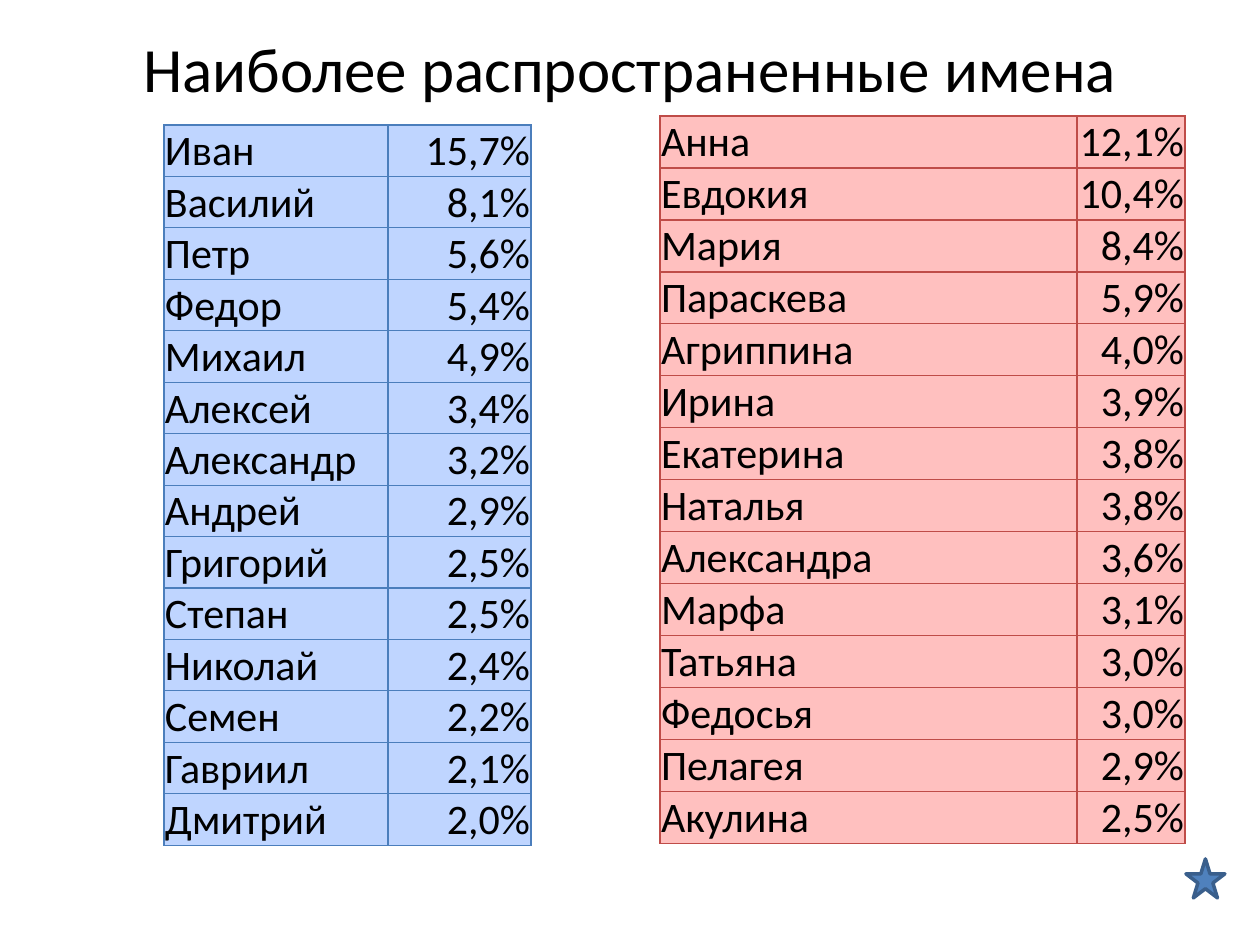
from lxml import etree
from pptx import Presentation
from pptx.dml.color import RGBColor
from pptx.enum.shapes import MSO_SHAPE
from pptx.enum.text import MSO_ANCHOR, PP_ALIGN
from pptx.oxml.ns import qn
from pptx.util import Pt

PX = 914400 / 126
FONT = "Calibri"
LEFT, CENTER, RIGHT = PP_ALIGN.LEFT, PP_ALIGN.CENTER, PP_ALIGN.RIGHT
MIDDLE, BOTTOM = MSO_ANCHOR.MIDDLE, MSO_ANCHOR.BOTTOM
STAR = MSO_SHAPE.STAR_5_POINT

MALE_NAMES = [
    ("Иван", "15,7%"), ("Василий", "8,1%"), ("Петр", "5,6%"),
    ("Федор", "5,4%"), ("Михаил", "4,9%"), ("Алексей", "3,4%"),
    ("Александр", "3,2%"), ("Андрей", "2,9%"), ("Григорий", "2,5%"),
    ("Степан", "2,5%"), ("Николай", "2,4%"), ("Семен", "2,2%"),
    ("Гавриил", "2,1%"), ("Дмитрий", "2,0%"),
]
FEMALE_NAMES = [
    ("Анна", "12,1%"), ("Евдокия", "10,4%"), ("Мария", "8,4%"),
    ("Параскева", "5,9%"), ("Агриппина", "4,0%"), ("Ирина", "3,9%"),
    ("Екатерина", "3,8%"), ("Наталья", "3,8%"), ("Александра", "3,6%"),
    ("Марфа", "3,1%"), ("Татьяна", "3,0%"), ("Федосья", "3,0%"),
    ("Пелагея", "2,9%"), ("Акулина", "2,5%"),
]


def px(n):
    return round(n * PX)


def rgb(color):
    return RGBColor.from_string(color)


def write(tf, text, size, align):
    p = tf.paragraphs[0]
    p.text = text
    p.alignment = align
    p.font.name = FONT
    p.font.size = Pt(size)
    p.font.color.rgb = rgb("000000")


def set_margins(target, side, bottom):
    target.margin_left = target.margin_right = target.margin_top = px(side)
    target.margin_bottom = px(bottom)


def add_title(slide, text, x, y, w, h):
    tf = slide.shapes.add_textbox(px(x), px(y), px(w), px(h)).text_frame
    tf.word_wrap = True
    tf.vertical_anchor = MIDDLE
    set_margins(tf, 0, 0)
    write(tf, text, 36, CENTER)


def set_borders(cell, color):
    tc_pr = cell._tc.get_or_add_tcPr()
    for side in ("lnL", "lnR", "lnT", "lnB"):
        ln = etree.SubElement(tc_pr, qn(f"a:{side}"), w=str(Pt(0.75)))
        fill = etree.SubElement(ln, qn("a:solidFill"))
        etree.SubElement(fill, qn("a:srgbClr"), val=color)


def add_names_table(slide, rows, x, y, widths, row_height, fill, border):
    table = slide.shapes.add_table(
        len(rows), len(widths), px(x), px(y),
        px(sum(widths)), px(row_height * len(rows))).table
    table.first_row = table.horz_banding = False
    for column, width in zip(table.columns, widths):
        column.width = px(width)
    for i, row in enumerate(rows):
        table.rows[i].height = px(row_height)
        for j, (text, align) in enumerate(zip(row, (LEFT, RIGHT))):
            cell = table.cell(i, j)
            cell.vertical_anchor = BOTTOM
            set_margins(cell, 1, 0)
            write(cell.text_frame, text, 24, align)
            set_borders(cell, border)
            cell.fill.solid()
            cell.fill.fore_color.rgb = rgb(fill)


def add_star(slide, x, y, size):
    sp = slide.shapes.add_shape(STAR, px(x), px(y), px(size), px(size))
    sp.shadow.inherit = False
    sp.fill.solid()
    sp.fill.fore_color.rgb = rgb("4F81BD")
    sp.line.color.rgb = rgb("3A5F8C")
    sp.line.width = Pt(2)


def main():
    prs = Presentation()
    prs.slide_width, prs.slide_height = px(1260), px(945)
    slide = prs.slides.add_slide(prs.slide_layouts[6])
    add_title(slide, "Наиболее распространенные имена", 63, 38, 1134, 58)
    add_names_table(slide, MALE_NAMES, 164, 125, (224, 143), 49,
                    "BFD5FF", "4B7EBC")
    add_names_table(slide, FEMALE_NAMES, 660, 116, (417, 108), 52,
                    "FFC0BF", "BF4C48")
    add_star(slide, 1186, 859, 39)
    prs.save("out.pptx")


if __name__ == "__main__":
    main()
